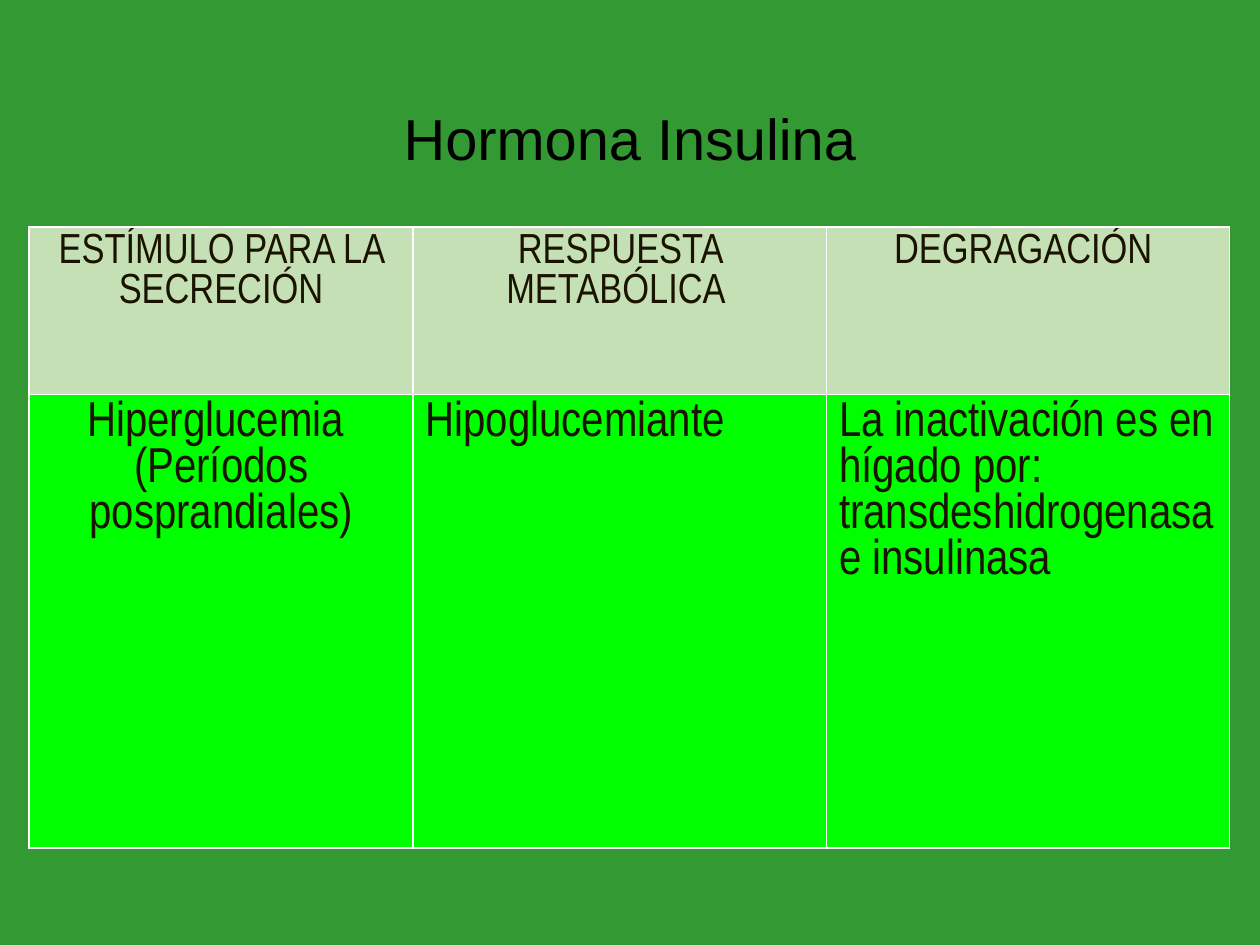
import pptx
import pptx.util
import pptx.dml.color
import pptx.enum.text
import pptx.oxml
import pptx.oxml.ns

Pt = pptx.util.Pt
ALIGN = pptx.enum.text.PP_ALIGN
INK = "1A1300"
HEADER_FILL = "C5E0B4"
BODY_FILL = "00FF00"
COLUMN_WIDTHS = (219.5, 236.2, 230.4)
ROW_HEIGHTS = (95.8, 259.2)
HEADERS = ("ESTÍMULO PARA LA SECRECIÓN", "RESPUESTA METABÓLICA ", "DEGRAGACIÓN ")
BODY = (
    ("Hiperglucemia \n(Períodos posprandiales)", ALIGN.CENTER),
    ("Hipoglucemiante", ALIGN.LEFT),
    ("La inactivación es en hígado por: transdeshidrogenasa e insulinasa", ALIGN.LEFT),
)


def rgb(value):
    """Return the colour for a hex string."""
    return pptx.dml.color.RGBColor.from_string(value)


def format_text(tf, text, name, size, color, align):
    """Write text into a frame and format every paragraph alike."""
    tf.text = text
    for p in tf.paragraphs:
        p.alignment = align
        p.font.name = name
        p.font.size = Pt(size)
        p.font.color.rgb = rgb(color)


def add_borders(cell, color, width):
    """Draw a solid line on the four sides of a cell."""
    tc_pr = cell._tc.get_or_add_tcPr()
    for i, side in enumerate("LRTB"):
        line = pptx.oxml.parse_xml(
            f'<a:ln{side} {pptx.oxml.ns.nsdecls("a")} w="{Pt(width)}">'
            f'<a:solidFill><a:srgbClr val="{color}"/></a:solidFill></a:ln{side}>'
        )
        tc_pr.insert(i, line)


def fill_cell(cell, text, size, fill, align):
    """Give a table cell its text, fill and borders."""
    format_text(cell.text_frame, text, "Arial Narrow", size, INK, align)
    cell.fill.solid()
    cell.fill.fore_color.rgb = rgb(fill)
    add_borders(cell, "FFFFFF", 1)


def add_title(s, text):
    """Place and format the slide title."""
    sp = s.shapes.title
    sp.left, sp.top, sp.width, sp.height = Pt(49.7), Pt(28.8), Pt(620.6), Pt(104.4)
    tf = sp.text_frame
    format_text(tf, text, "Arial", 33, "000000", ALIGN.CENTER)
    tf.vertical_anchor = pptx.enum.text.MSO_ANCHOR.MIDDLE
    tf.paragraphs[0].line_spacing = 0.9


def add_hormone_table(s):
    """Add the table of stimulus, response and degradation."""
    table = s.shapes.add_table(
        len(ROW_HEIGHTS), len(COLUMN_WIDTHS), Pt(16.6), Pt(129.6),
        Pt(sum(COLUMN_WIDTHS)), Pt(sum(ROW_HEIGHTS)),
    ).table
    for row, height in zip(table.rows, ROW_HEIGHTS):
        row.height = Pt(height)
    for i, width in enumerate(COLUMN_WIDTHS):
        table.columns[i].width = Pt(width)
        fill_cell(table.cell(0, i), HEADERS[i], 24, HEADER_FILL, ALIGN.CENTER)
        text, align = BODY[i]
        fill_cell(table.cell(1, i), text, 28, BODY_FILL, align)


def main():
    """Build and save the slide."""
    prs = pptx.Presentation()
    prs.slide_width, prs.slide_height = Pt(720), Pt(540)
    s = prs.slides.add_slide(prs.slide_layouts[5])
    s.background.fill.solid()
    s.background.fill.fore_color.rgb = rgb("339933")
    add_title(s, "Hormona Insulina")
    add_hormone_table(s)
    prs.save("out.pptx")


if __name__ == "__main__":
    main()
